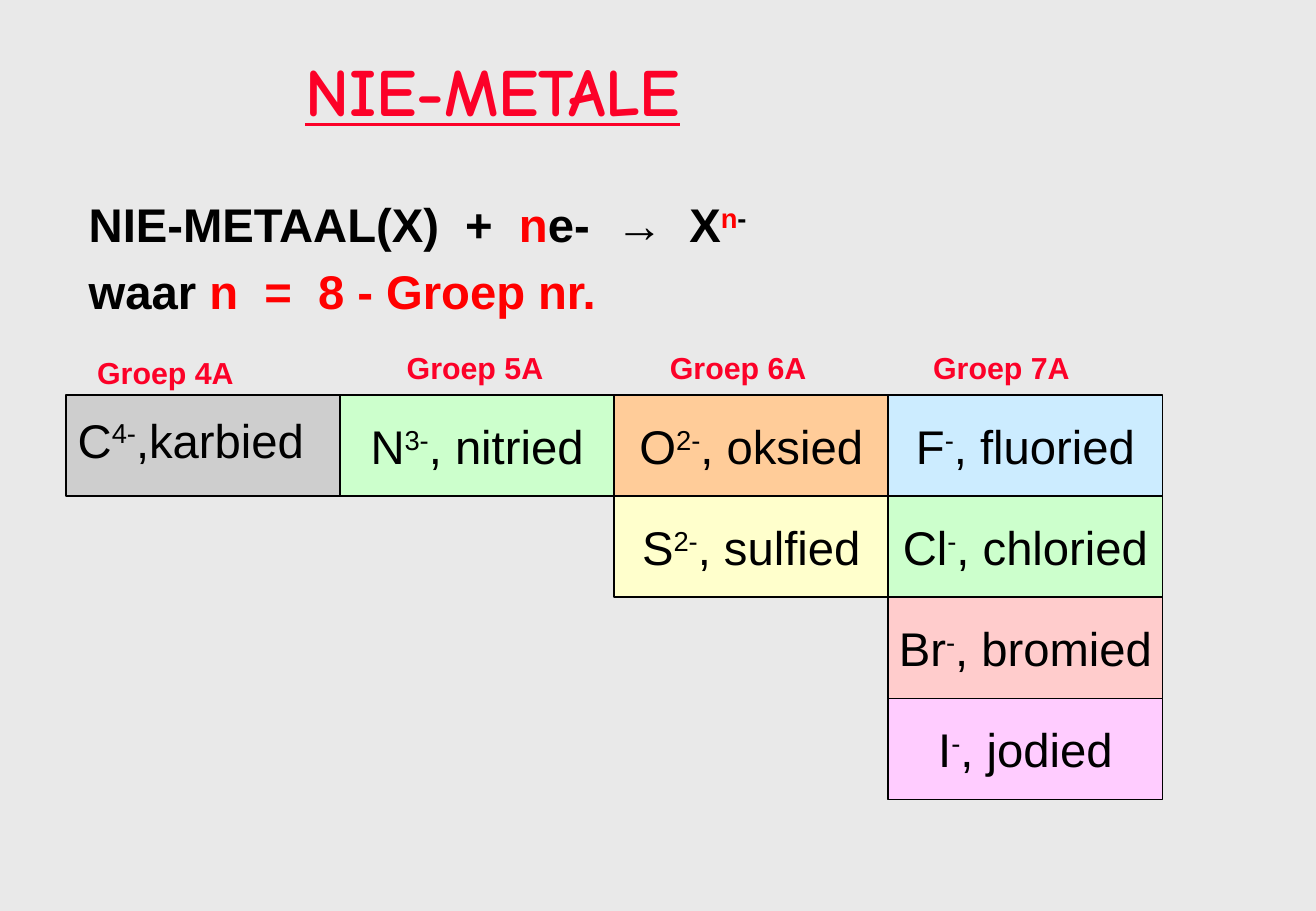
import pptx
import pptx.dml.color
import pptx.enum.shapes
import pptx.enum.text
import pptx.oxml
import pptx.util

Pt = pptx.util.Pt
ALIGN = pptx.enum.text.PP_ALIGN
ANCHOR = pptx.enum.text.MSO_ANCHOR

BLACK, RED, CRIMSON = "000000", "FF0000", "FC0128"
TEXT_SHADOW = (
    '<a:effectLst xmlns:a="http://schemas.openxmlformats.org/drawingml/2006/main">'
    '<a:outerShdw blurRad="38100" dist="38100" dir="2700000" algn="tl">'
    '<a:srgbClr val="000000"/></a:outerShdw></a:effectLst>'
)


def rgb(code):
    return pptx.dml.color.RGBColor.from_string(code)


class IonSlide:
    font = "Arial"
    text_size = 28

    def __init__(self, deck, background):
        self.slide = deck.slides.add_slide(deck.slide_layouts[6])
        self.slide.background.fill.solid()
        self.slide.background.fill.fore_color.rgb = rgb(background)

    def add_runs(self, paragraph, pieces, size=text_size, bold=False, font=font):
        """Add (text, colour, raised) pieces as the runs of a paragraph."""
        for wording, colour, raised in pieces:
            run = paragraph.add_run()
            run.text = wording
            run.font.name = font
            run.font.size = Pt(size)
            run.font.bold = bold
            run.font.color.rgb = rgb(colour)
            if raised:
                run.font._element.set("baseline", "30000")

    def text_box(self, left, top, width, height, wrap=False):
        box = self.slide.shapes.add_textbox(Pt(left), Pt(top), Pt(width), Pt(height))
        box.text_frame.word_wrap = wrap
        return box.text_frame

    def title(self, wording, left, top, width, height):
        frame = self.text_box(left, top, width, height, wrap=True)
        frame.vertical_anchor = ANCHOR.MIDDLE
        heading = frame.paragraphs[0]
        heading.alignment = ALIGN.CENTER
        heading.line_spacing = 0.9
        self.add_runs(heading, [(wording, CRIMSON, False)], 40, True, "Comic Neue")
        lettering = heading.runs[0].font
        lettering.underline = True
        fill = lettering._element.find(pptx.oxml.ns.qn("a:solidFill"))
        fill.addnext(pptx.oxml.parse_xml(TEXT_SHADOW))

    def rule(self, lines, left, top, width, height):
        frame = self.text_box(left, top, width, height, wrap=True)
        for index, pieces in enumerate(lines):
            line = frame.add_paragraph() if index else frame.paragraphs[0]
            line.line_spacing = 0.9
            line.space_before = Pt(9.5)
            self.add_runs(line, pieces, bold=True)

    def group_label(self, wording, left, top):
        frame = self.text_box(left, top, 96.5, 29)
        self.add_runs(frame.paragraphs[0], [(wording, CRIMSON, False)], 18, True)

    def cell(self, left, top, width, height, fill):
        rectangle = pptx.enum.shapes.MSO_SHAPE.RECTANGLE
        cell = self.slide.shapes.add_shape(
            rectangle, Pt(left), Pt(top), Pt(width), Pt(height))
        cell.shadow.inherit = False
        cell.fill.solid()
        cell.fill.fore_color.rgb = rgb(fill)
        cell.line.color.rgb = rgb(BLACK)
        cell.line.width = Pt(1)
        frame = cell.text_frame
        frame.word_wrap = False
        frame.vertical_anchor = ANCHOR.MIDDLE
        frame.paragraphs[0].alignment = ALIGN.CENTER
        return frame

    def ion(self, frame, symbol, charge, name):
        pieces = [(symbol, BLACK, False), (charge, BLACK, True), (name, BLACK, False)]
        self.add_runs(frame.paragraphs[0], pieces)


RULE_LINES = [
    [("NIE-METAAL(X)  +  ", BLACK, False), ("n", RED, False),
     ("e-  →  X", BLACK, False), ("n", RED, True), ("-", BLACK, True)],
    [("waar ", BLACK, False), ("n  =  8 - Groep nr.", RED, False)],
]
LABELS = [("Groep 4A", 50.5, 206.5)] + [
    (f"Groep {group}A", 234 + 156 * (group - 5), 203.5) for group in (5, 6, 7)
]
# Each column is one group of the periodic table, read downwards.
COLUMNS = [
    [("C", "4-", ",karbied", "CECECE")],
    [("N", "3-", ", nitried", "CCFFCC")],
    [("O", "2-", ", oksied", "FFCC99"), ("S", "2-", ", sulfied", "FFFFCC")],
    [("F", "-", ", fluoried", "CCECFF"), ("Cl", "-", ", chloried", "CCFFCC"),
     ("Br", "-", ", bromied", "FFCCCC"), ("I", "-", ", jodied", "FFCCFF")],
]
GRID_LEFT, GRID_TOP, CELL_WIDTH, CELL_HEIGHT = 39, 234, 162.5, 60


def main():
    deck = pptx.Presentation()
    deck.slide_width, deck.slide_height = Pt(780), Pt(540)
    page = IonSlide(deck, "E9E9E9")
    page.title("NIE-METALE", 90.5, 26, 403, 60)
    page.rule(RULE_LINES, 45.5, 116, 611, 66)
    for column, ions in enumerate(COLUMNS):
        for row, (symbol, charge, name, fill) in enumerate(ions):
            left = GRID_LEFT + column * CELL_WIDTH
            top = GRID_TOP + row * CELL_HEIGHT
            frame = page.cell(left, top, CELL_WIDTH, CELL_HEIGHT, fill)
            if symbol == "C":
                frame = page.text_box(left, top + 6, 152.5, 41)
            page.ion(frame, symbol, charge, name)
    for label in LABELS:
        page.group_label(*label)
    deck.save("out.pptx")


if __name__ == "__main__":
    main()
